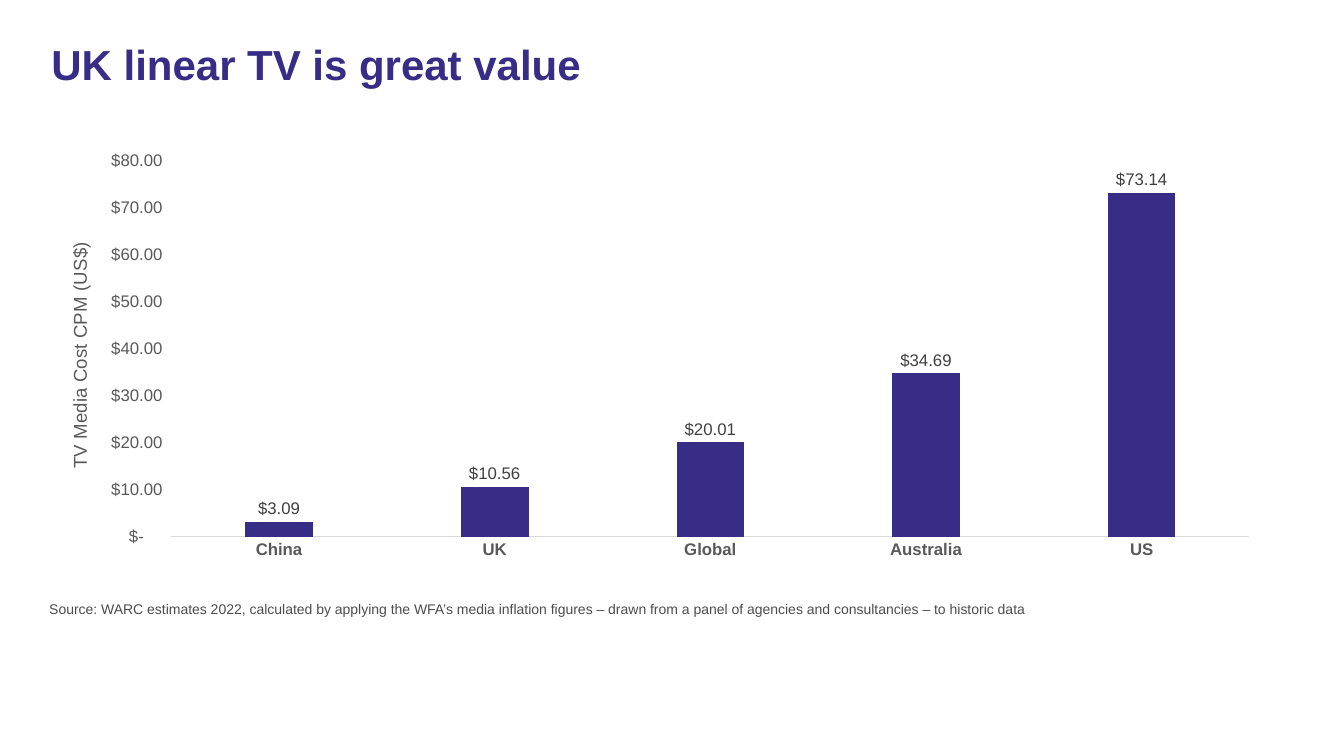
from dataclasses import dataclass

from lxml.etree import SubElement
from pptx import Presentation
from pptx.chart.data import CategoryChartData
from pptx.dml.color import RGBColor
from pptx.enum.chart import XL_CHART_TYPE, XL_LABEL_POSITION, XL_TICK_MARK
from pptx.enum.text import MSO_ANCHOR, MSO_AUTO_SIZE, PP_ALIGN
from pptx.oxml.ns import qn
from pptx.util import Inches, Pt


# Colours and type sizes
@dataclass(frozen=True)
class Theme:
    face: str = "Arial"
    brand: str = "372D87"
    note: str = "4D4D4D"
    axis: str = "595959"
    label: str = "404040"
    rule: str = "D9D9D9"
    head: float = 30
    unit: float = 13.3
    tick: float = 12
    small: float = 10


THEME = Theme()
MONEY = (r'_-[$$-409]* #,##0.00_ ;_-[$$-409]* \-#,##0.00\ ;'
         r'_-[$$-409]* "-"??_ ;_-@_ ')
COSTS = {"China": 3.09, "UK": 10.56, "Global": 20.01,
         "Australia": 34.69, "US": 73.14}


def style(font, size, color, bold=False):
    font.name = THEME.face
    font.size = Pt(size)
    font.bold = bold
    font.color.rgb = RGBColor.from_string(color)


def write(frame, text, size, color, bold=False, align=None, space=None):
    line = frame.paragraphs[0]
    line.alignment = align
    line.line_spacing = space
    run = line.add_run()
    run.text = text
    style(run.font, size, color, bold)


def place(parent, inner=False, **spots):
    """Set a manual layout, in fractions of the chart, on a chart part."""
    old = parent.find(qn("c:layout"))
    if old is not None:
        parent.remove(old)
    layout = SubElement(parent, qn("c:layout"))
    manual = SubElement(layout, qn("c:manualLayout"))
    if inner:
        SubElement(manual, qn("c:layoutTarget")).set("val", "inner")
    for side in "xy":
        SubElement(manual, qn(f"c:{side}Mode")).set("val", "edge")
    for key, val in spots.items():
        SubElement(manual, qn(f"c:{key}")).set("val", str(val))
    return layout


class Page:
    def __init__(self, deck, theme):
        self.theme = theme
        self.slide = deck.slides.add_slide(deck.slide_layouts[5])

    def frame(self, shape):
        frame = shape.text_frame
        frame.word_wrap = True
        frame.auto_size = MSO_AUTO_SIZE.NONE
        frame.vertical_anchor = MSO_ANCHOR.TOP
        return frame

    def title(self, text, box):
        shape = self.slide.shapes.title
        shape.left, shape.top, shape.width, shape.height = map(Inches, box)
        write(self.frame(shape), text, self.theme.head, self.theme.brand,
              bold=True, align=PP_ALIGN.LEFT, space=0.9)

    def text(self, text, box):
        shape = self.slide.shapes.add_textbox(*map(Inches, box))
        write(self.frame(shape), text, self.theme.small, self.theme.note)

    def chart(self, costs, unit, box):
        look = self.theme
        data = CategoryChartData(number_format=MONEY)
        data.categories = list(costs)
        data.add_series("Series 1", list(costs.values()))
        chart = self.slide.shapes.add_chart(
            XL_CHART_TYPE.COLUMN_CLUSTERED, *map(Inches, box), data).chart
        chart.has_legend = chart.has_title = False
        style(chart.font, look.small, "000000")

        # Columns and their labels
        plot = chart.plots[0]
        plot.gap_width, plot.overlap = 219, -27
        plot.vary_by_categories = False
        fill = plot.series[0].format.fill
        fill.solid()
        fill.fore_color.rgb = RGBColor.from_string(look.brand)
        plot.has_data_labels = True
        labels = plot.data_labels
        labels.show_value = True
        labels.position = XL_LABEL_POSITION.OUTSIDE_END
        style(labels.font, look.tick, look.label)

        # Axes
        cats, vals = chart.category_axis, chart.value_axis
        for axis, item in ((cats, None), (vals, MONEY), (None, None))[:2]:
            axis.has_major_gridlines = False
            axis.major_tick_mark = axis.minor_tick_mark = XL_TICK_MARK.NONE
            style(axis.tick_labels.font, look.tick, look.axis, axis is cats)
        for part in (labels, vals.tick_labels):
            part.number_format = MONEY
            part.number_format_is_linked = False
        cats.format.line.color.rgb = RGBColor.from_string(look.rule)
        cats.format.line.width = Pt(0.75)
        vals.format.line.fill.background()
        vals.minimum_scale, vals.maximum_scale, vals.major_unit = 0, 80, 10

        # Axis title and plot area positions
        name = vals.axis_title
        write(name.text_frame, unit, look.unit, look.axis)
        layout = place(name._element, x=0.01, y=0.22)
        name._element.find(qn("c:tx")).addnext(layout)
        area = chart._chartSpace.chart.plotArea
        area.insert(0, place(area, inner=True, x=0.098, y=0.038,
                             w=0.889, h=0.874))


def main():
    deck = Presentation()
    deck.slide_width, deck.slide_height = Inches(13.33), Inches(7.5)
    page = Page(deck, THEME)
    page.text("Source: WARC estimates 2022, calculated by applying the WFA’s "
              "media inflation figures – drawn from a panel of agencies and "
              "consultancies – to historic data", (0.39, 5.91, 12.4, 0.33))
    page.chart(COSTS, "TV Media Cost CPM (US$)", (0.52, 1.43, 12.03, 4.27))
    page.title("UK linear TV is great value", (0.41, 0.39, 12.4, 1.12))
    deck.save("out.pptx")


if __name__ == "__main__":
    main()
